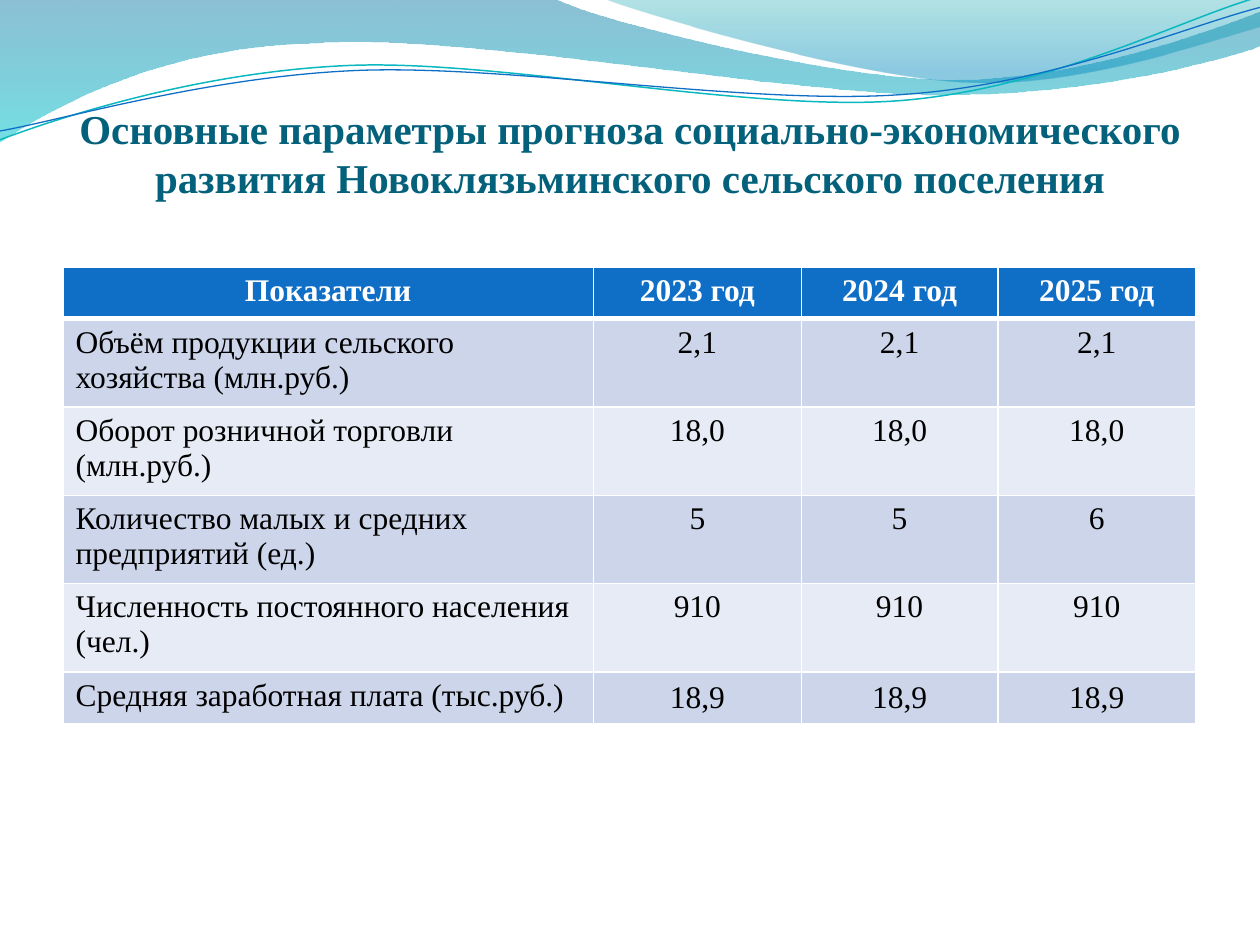
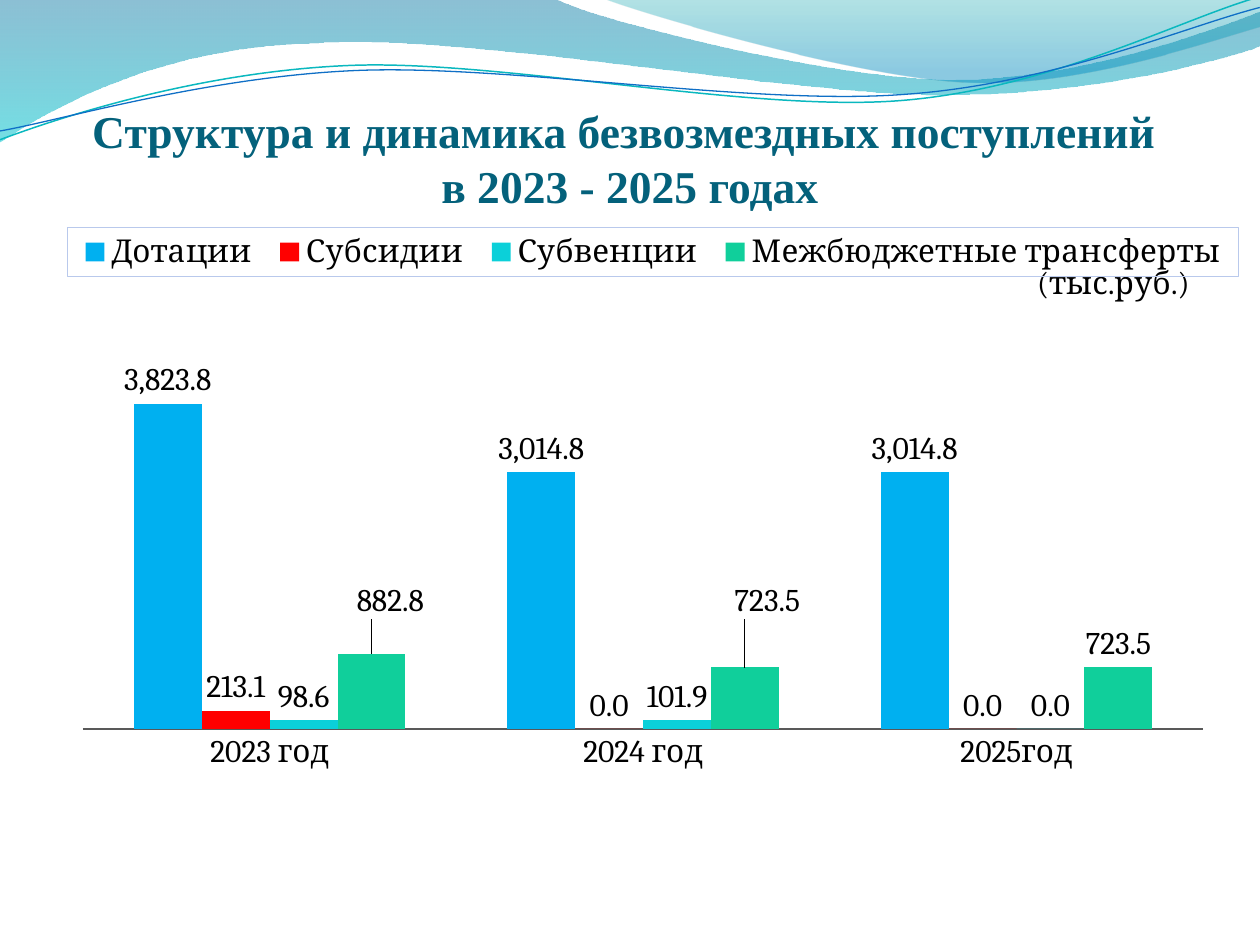
from math import cos, radians, sin

from lxml import etree
from pptx import Presentation
from pptx.chart.data import CategoryChartData
from pptx.dml.color import RGBColor
from pptx.enum.chart import XL_CHART_TYPE, XL_LABEL_POSITION, XL_LEGEND_POSITION, XL_TICK_MARK
from pptx.enum.text import MSO_ANCHOR, PP_ALIGN
from pptx.oxml import parse_xml
from pptx.oxml.ns import nsdecls, qn
from pptx.util import Inches, Pt

CLUSTERED = XL_CHART_TYPE.COLUMN_CLUSTERED
OUTSIDE_END = XL_LABEL_POSITION.OUTSIDE_END
LEGEND_TOP = XL_LEGEND_POSITION.TOP
NO_TICK = XL_TICK_MARK.NONE
CENTER, LEFT = PP_ALIGN.CENTER, PP_ALIGN.LEFT
TOP, MIDDLE = MSO_ANCHOR.TOP, MSO_ANCHOR.MIDDLE

COLORS = {
    "title": "04617B", "text": "000000", "white": "FFFFFF",
    "header": "0F6FC6", "odd_row": "CCD5EA", "even_row": "E7EBF5",
    "teal_line": "0AB8BF", "blue_line": "0F6FC6",
    "wave_top": "0074A1", "wave_bottom": "00C6CF",
    "corner_top": "00A1A9", "corner_bottom": "008BBF",
    "grants": "00B0F0", "subsidies": "FF0000",
    "subventions": "0BD0D9", "transfers": "10CF9B",
    "axis": "595959", "legend_line": "B9C9EC",
}
TABLE_FONT = "Times New Roman"
CHART_FONT = "Cambria"
NUMBER_FORMAT = "#,##0.0"
CURVE_TILT = -2.7

WAVE = [(0, 0), (4.4, -0.01), (4.76, 0.17, 6.64, 0.63, 7.58, 0.63),
        (8.53, 0.63, 9.58, 0.26, 10, 0.09), (10.01, 0.36),
        (9.83, 0.44, 8.7, 0.76, 7.46, 0.75), (6.22, 0.75, 3.82, 0.28, 2.57, 0.34),
        (1.29, 0.36, 0.46, 0.83, -0.01, 1.13), (0, 0)]
CORNER = [(4.79, -0.01), (5.09, 0.11, 6.82, 0.62, 7.69, 0.65),
          (8.56, 0.69, 9.61, 0.32, 10, 0.21), (10, 0), (4.79, -0.01)]
TEAL_CURVE = [(0, 1.11), (0.48, 0.93, 1.58, 0.57, 2.77, 0.52),
              (3.95, 0.47, 5.93, 0.89, 7.13, 0.8), (8.33, 0.71, 9.38, 0.15, 9.98, -0.02)]
BLUE_CURVE = [(0, 1.04), (0.47, 0.96, 1.64, 0.61, 2.83, 0.56),
              (4.03, 0.51, 5.97, 0.84, 7.17, 0.75), (8.36, 0.67, 9.41, 0.21, 10, 0.06)]

TABLE_ROWS = [
    ("Показатели", "2023 год", "2024 год", "2025 год"),
    ("Объём продукции сельского хозяйства (млн.руб.)", "2,1", "2,1", "2,1"),
    ("Оборот розничной торговли (млн.руб.)", "18,0", "18,0", "18,0"),
    ("Количество малых и средних предприятий (ед.)", "5", "5", "6"),
    ("Численность постоянного населения (чел.)", "910", "910", "910"),
    ("Средняя заработная плата (тыс.руб.)", "18,9", "18,9", "18,9"),
]
COLUMN_WIDTHS = [4.21, 1.65, 1.56, 1.57]
ROW_HEIGHT = 0.41

YEARS = ["2023 год", "2024 год", "2025год"]
REVENUES = [
    ("Дотации", "grants", (3823.8, 3014.8, 3014.8)),
    ("Субсидии", "subsidies", (213.1, 0, 0)),
    ("Субвенции", "subventions", (98.6, 101.9, 0)),
    ("Межбюджетные трансферты", "transfers", (882.8, 723.5, 723.5)),
]
MOVED_LABELS = [(0.016, -0.043), (0.019, -0.063)]


def rgb(name):
    return RGBColor.from_string(COLORS[name])


def style_font(font, face, size, color, bold=False):
    font.name = face
    font.size = Pt(size)
    font.bold = bold
    font.color.rgb = rgb(color)


def turn(points, center, degrees):
    angle = radians(degrees)
    turned = []
    for x, y in points:
        dx, dy = x - center[0], y - center[1]
        turned.append((center[0] + dx * cos(angle) - dy * sin(angle),
                       center[1] + dx * sin(angle) + dy * cos(angle)))
    return turned


def bend_lines(shape, segments):
    outline = shape._element.spPr.find(f".//{qn('a:path')}")
    lines = iter(outline.findall(qn("a:lnTo")))
    for segment in segments[1:]:
        first = next(lines)
        if len(segment) == 6:
            curve = etree.Element(qn("a:cubicBezTo"))
            first.addprevious(curve)
            for line in (first, next(lines), next(lines)):
                curve.append(line[0])
                outline.remove(line)


def add_outline(page, segments, closed, tilt=0):
    points = [(segment[i], segment[i + 1]) for segment in segments
              for i in range(0, len(segment), 2)]
    if tilt:
        center = [(points[0][axis] + points[-1][axis]) / 2 for axis in (0, 1)]
        points = turn(points, center, -tilt)
    start, *others = [(Inches(x), Inches(y)) for x, y in points]
    builder = page.shapes.build_freeform(*start)
    builder.add_line_segments(others, close=closed)
    shape = builder.convert_to_shape()
    bend_lines(shape, segments)
    shape.rotation = tilt
    shape.shadow.inherit = False
    return shape


def add_gradient_area(page, segments, stops):
    shape = add_outline(page, segments, True)
    shape.line.fill.background()
    stop_xml = "".join(
        f'<a:gs pos="{place * 1000}"><a:srgbClr val="{COLORS[color]}">'
        f'<a:alpha val="{opacity * 1000}"/></a:srgbClr></a:gs>'
        for place, color, opacity in stops)
    gradient = parse_xml(
        f'<a:gradFill {nsdecls("a")} rotWithShape="1"><a:gsLst>{stop_xml}</a:gsLst>'
        '<a:lin ang="5400000" scaled="0"/></a:gradFill>')
    shape._element.spPr.find(qn("a:custGeom")).addnext(gradient)


def add_curve(page, segments, color, width):
    shape = add_outline(page, segments, False, CURVE_TILT)
    shape.fill.background()
    shape.line.color.rgb = rgb(color)
    shape.line.width = Pt(width)


def add_waves(page):
    add_gradient_area(page, WAVE, [(0, "wave_top", 45), (100, "wave_bottom", 55)])
    add_gradient_area(page, CORNER, [(0, "corner_top", 30), (80, "corner_bottom", 45)])
    add_curve(page, TEAL_CURVE, "teal_line", 0.85)
    add_curve(page, BLUE_CURVE, "blue_line", 0.75)


def add_title(page, lines, size):
    box = page.shapes.add_textbox(Inches(0.5), Inches(0.77), Inches(9), Inches(1.25))
    frame = box.text_frame
    frame.word_wrap = True
    frame.vertical_anchor = TOP
    frame.margin_left = frame.margin_right = frame.margin_bottom = 0
    frame.margin_top = Inches(0.05)
    para = frame.paragraphs[0]
    para.alignment = CENTER
    for index, line in enumerate(lines):
        if index:
            para.add_line_break()
        span = para.add_run()
        span.text = line
        style_font(span.font, TABLE_FONT, size, "title", True)


def add_borders(cell, widths):
    properties = cell._tc.get_or_add_tcPr()
    for side, width in zip("LRTB", widths):
        line = etree.SubElement(properties, qn(f"a:ln{side}"), w=str(Pt(width)))
        fill = etree.SubElement(line, qn("a:solidFill"))
        etree.SubElement(fill, qn("a:srgbClr"), val=COLORS["white"])


def fill_cell(cell, text, row, column):
    header = row == 0
    add_borders(cell, (1, 1, 3 if row == 1 else 1, 3 if header else 1))
    cell.fill.solid()
    cell.fill.fore_color.rgb = rgb("header" if header else "odd_row" if row % 2 else "even_row")
    if row == len(TABLE_ROWS) - 1 and column:
        cell.vertical_anchor = MIDDLE
        cell.margin_left = cell.margin_right = cell.margin_top = cell.margin_bottom = 0
    para = cell.text_frame.paragraphs[0]
    para.alignment = CENTER if header or column else LEFT
    span = para.add_run()
    span.text = text
    style_font(span.font, TABLE_FONT, 18, "white" if header else "text", header)


def add_forecast_table(page):
    frame = page.shapes.add_table(
        len(TABLE_ROWS), len(COLUMN_WIDTHS), Inches(0.5), Inches(2.12),
        Inches(sum(COLUMN_WIDTHS)), Inches(ROW_HEIGHT * len(TABLE_ROWS)))
    table = frame.table
    table.first_row = table.horz_banding = False
    for column, width in zip(table.columns, COLUMN_WIDTHS):
        column.width = Inches(width)
    for row, texts in enumerate(TABLE_ROWS):
        for column, text in enumerate(texts):
            fill_cell(table.cell(row, column), text, row, column)
    frame.height = Inches(3.61)


def set_layout(parent, index, values, edge=True, inner=False):
    previous = parent.find(qn("c:layout"))
    if previous is not None:
        parent.remove(previous)
    layout = etree.Element(qn("c:layout"))
    manual = etree.SubElement(layout, qn("c:manualLayout"))
    settings = [("layoutTarget", "inner")] if inner else []
    if edge:
        settings += [("xMode", "edge"), ("yMode", "edge")]
    settings += zip("xywh", values)
    for name, value in settings:
        etree.SubElement(manual, qn(f"c:{name}"), val=str(value))
    parent.insert(index, layout)


def style_legend(chart):
    chart.has_legend = True
    legend = chart.legend
    legend.position = LEGEND_TOP
    legend.include_in_layout = False
    style_font(legend.font, CHART_FONT, 18, "text")
    set_layout(legend._element, 1, (0.004, 0, 0.995, 0.072))
    border = parse_xml(
        f'<c:spPr {nsdecls("c", "a")}><a:ln w="{Pt(0.75)}"><a:solidFill>'
        f'<a:srgbClr val="{COLORS["legend_line"]}"/></a:solidFill></a:ln></c:spPr>')
    legend._element.find(qn("c:overlay")).addnext(border)


def style_unit_title(chart):
    chart.has_title = True
    title = chart.chart_title
    span = title.text_frame.paragraphs[0].add_run()
    span.text = "(тыс.руб.)"
    style_font(span.font, CHART_FONT, 18, "text")
    set_layout(title._element, 1, (0.823, 0.042))


def style_axes(chart):
    years = chart.category_axis
    years.major_tick_mark = NO_TICK
    years.format.line.color.rgb = rgb("axis")
    years.format.line.width = Pt(1)
    style_font(years.tick_labels.font, CHART_FONT, 18, "text")
    values = chart.value_axis
    values.visible = False
    values.has_major_gridlines = False
    values.minimum_scale = 0
    values.maximum_scale = 4500


def style_series(series, color):
    series.format.fill.solid()
    series.format.fill.fore_color.rgb = rgb(color)
    series.invert_if_negative = False
    labels = series.data_labels
    labels.show_value = True
    labels.position = OUTSIDE_END
    labels.number_format = NUMBER_FORMAT
    labels.number_format_is_linked = False
    style_font(labels.font, CHART_FONT, 18, "text")


def move_labels(series):
    for index, shift in enumerate(MOVED_LABELS):
        label = series.points[index].data_label
        label.position = OUTSIDE_END
        style_font(label.font, CHART_FONT, 18, "text")
        set_layout(label._get_or_add_dLbl(), 1, shift, edge=False)
    series.data_labels._element.append(parse_xml(
        f'<c:extLst {nsdecls("c")}><c:ext uri="{{CE6537A1-D6FC-4f65-9D91-7224C49458BB}}" '
        'xmlns:c15="http://schemas.microsoft.com/office/drawing/2012/chart">'
        '<c15:showLeaderLines val="0"/></c:ext></c:extLst>'))


def add_revenue_chart(page):
    chart_data = CategoryChartData(number_format=NUMBER_FORMAT)
    chart_data.categories = YEARS
    for name, _, values in REVENUES:
        chart_data.add_series(name, values)
    chart = page.shapes.add_chart(
        CLUSTERED, Inches(0.5), Inches(1.8), Inches(9.34), Inches(5.42), chart_data).chart
    style_font(chart.font, CHART_FONT, 18, "text")
    style_unit_title(chart)
    style_legend(chart)
    style_axes(chart)
    plot = chart.plots[0]
    plot.vary_by_categories = False
    plot.gap_width = 150
    plot.overlap = 0
    for series, (_, color, _) in zip(plot.series, REVENUES):
        style_series(series, color)
    move_labels(plot.series[-1])
    plot_area = chart._chartSpace.chart.plotArea
    set_layout(plot_area, 0, (0.017, 0.174, 0.952, 0.561), inner=True)


def add_page(deck, title_lines, title_size):
    page = deck.slides.add_slide(deck.slide_layouts[6])
    add_waves(page)
    add_title(page, title_lines, title_size)
    return page


def main():
    deck = Presentation()
    deck.slide_width, deck.slide_height = Inches(10), Inches(7.5)
    forecast = add_page(deck, ["Основные параметры прогноза социально-экономического "
                               "развития Новоклязьминского сельского поселения"], 23.4)
    add_forecast_table(forecast)
    revenue = add_page(deck, ["Структура и динамика безвозмездных поступлений ",
                              "в 2023 - 2025 годах"], 26)
    add_revenue_chart(revenue)
    deck.save("out.pptx")


if __name__ == "__main__":
    main()
